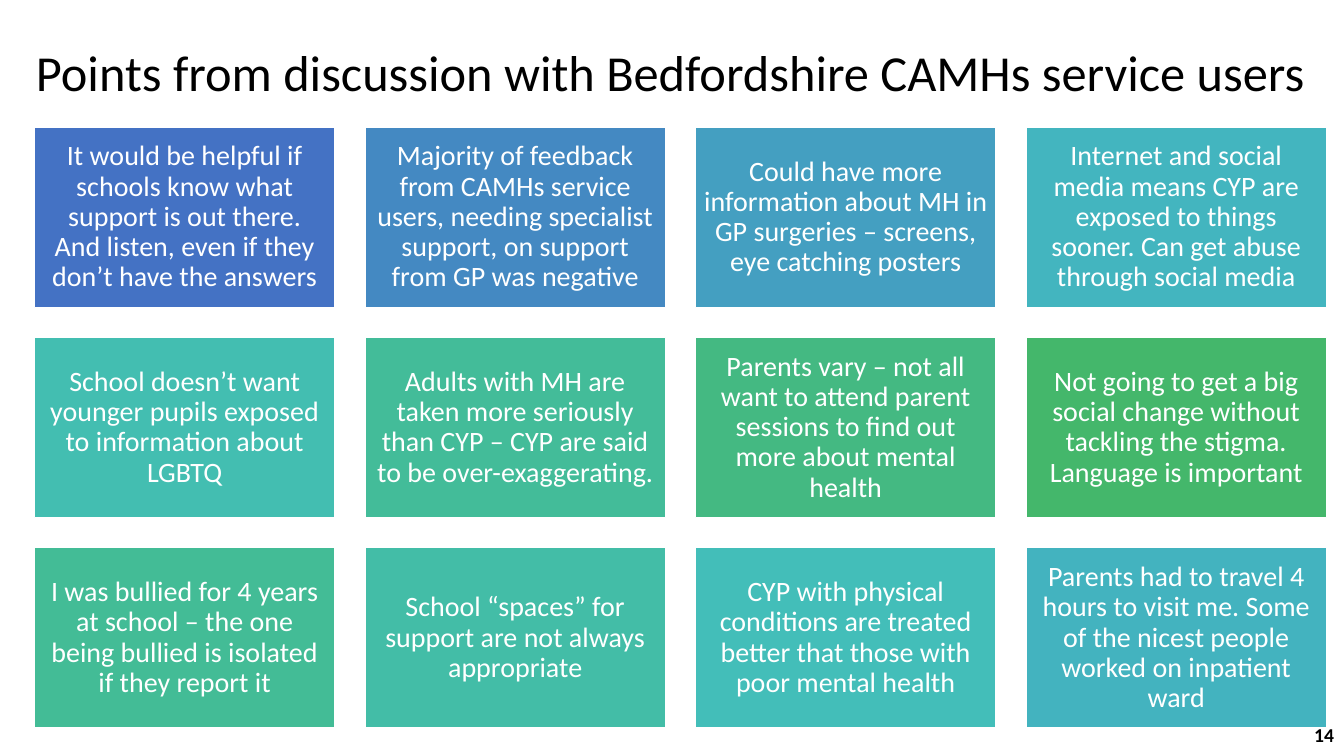
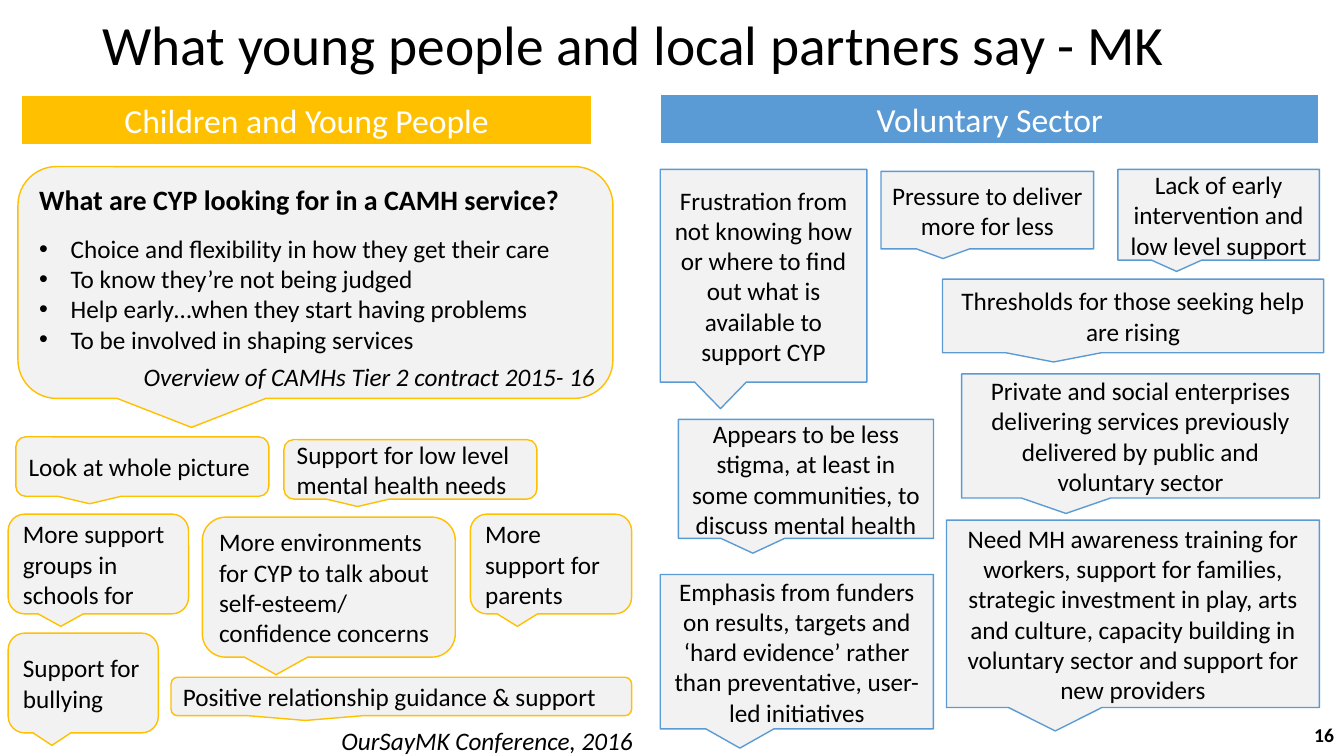
import collections
import dataclasses

import lxml.etree
import pptx
import pptx.dml.color
import pptx.enum.shapes
import pptx.enum.text
import pptx.oxml.ns
import pptx.util

Pt = pptx.util.Pt
SHAPE = pptx.enum.shapes.MSO_SHAPE
ALIGN = pptx.enum.text.PP_ALIGN
ANCHOR = pptx.enum.text.MSO_ANCHOR

Box = collections.namedtuple("Box", "x y w h")


@dataclasses.dataclass(frozen=True)
class Theme:
    font: str = "Calibri"
    ink: str = "000000"
    paper: str = "FFFFFF"
    bubble: str = "F2F2F2"
    youth: str = "FFC000"
    sector: str = "5B9BD5"
    tiles: tuple = (
        "4472C4", "4489C2", "449FC1", "43B5BF",
        "43BEB1", "43BC99", "44B982", "44B76B",
        "43BC96", "43BDA7", "43BEB9", "43B3BF",
    )
    band_size: float = 24
    strong_size: float = 20
    body_size: float = 18
    number_size: float = 14


THEME = Theme()
WIDTH, HEIGHT = 960, 540

POINTS = [
    "It would be helpful if schools know what support is out there. "
    "And listen, even if they don’t have the answers",
    "Majority of feedback from CAMHs service users, needing specialist support, "
    "on support from GP was negative",
    "Could have more information about MH in GP surgeries – screens, eye catching posters",
    "Internet and social media means CYP are exposed to things sooner. "
    "Can get abuse through social media",
    "School doesn’t want younger pupils exposed to information about LGBTQ",
    "Adults with MH are taken more seriously than CYP – CYP are said to be over-exaggerating.",
    "Parents vary – not all want to attend parent sessions to find out more about mental health",
    "Not going to get a big social change without tackling the stigma. Language is important",
    "I was bullied for 4 years at school – the one being bullied is isolated if they report it",
    "School “spaces” for support are not always appropriate",
    "CYP with physical conditions are treated better that those with poor mental health",
    "Parents had to travel 4 hours to visit me. "
    "Some of the nicest people worked on inpatient ward",
]

WISHES = [
    "Choice and flexibility in how they get their care",
    "To know they’re not being judged",
    "Help early…when they start having problems",
    "To be involved in shaping services",
]

# Callout boxes are measured from the corner of their panel.
YOUTH_CALLOUTS = [
    (Box(5.5, 245, 180.7, 42.5), "Look at whole picture"),
    (Box(197, 247, 180.7, 42.5), "Support for low level mental health needs"),
    (Box(138.7, 302.4, 180.7, 100),
     "More environments for CYP to talk about self-esteem/ confidence concerns"),
    (Box(0, 300.2, 128.9, 71.3), "More support groups in schools for"),
    (Box(330.2, 300.2, 115.2, 71.3), "More support for parents"),
    (Box(0, 385.2, 107.3, 71.3), "Support for bullying"),
    (Box(116.4, 416.8, 329, 27.4), "Positive relationship guidance & support"),
]

SECTOR_CALLOUTS = [
    (Box(0, 54, 147.6, 151.9),
     "Frustration from not knowing how or where to find out what is available to support CYP"),
    (Box(326.9, 54, 144, 64.8), "Lack of early intervention and low level support"),
    (Box(157.7, 55.4, 151.9, 55.4), "Pressure to deliver more for less"),
    (Box(215.3, 200.1, 255.6, 88.6),
     "Private and social enterprises delivering services previously delivered by "
     "public and voluntary sector"),
    (Box(13, 232.5, 182.2, 85),
     "Appears to be less stigma, at least in some communities, to discuss mental health"),
    (Box(201.6, 132.4, 272.2, 52.6), "Thresholds for those seeking help are rising"),
    (Box(0, 343.4, 195.1, 110.2),
     "Emphasis from funders on results, targets and ‘hard evidence’ rather than "
     "preventative, user-led initiatives"),
    (Box(204.5, 304.5, 266.4, 133.9),
     "Need MH awareness training for workers, support for families, strategic investment "
     "in play, arts and culture, capacity building in voluntary sector and support for "
     "new providers"),
]


def rgb(color):
    return pptx.dml.color.RGBColor.from_string(color)


def apply(obj, formats):
    for name, value in formats.items():
        setattr(obj, name, value)


def inside(panel, box):
    """Move a box measured from the panel's corner onto the slide."""
    return Box(panel.x + box.x, panel.y + box.y, box.w, box.h)


def add_paragraph(tf, text, size, color=THEME.ink, font=None, **layout):
    p = tf.paragraphs[0] if not tf.text else tf.add_paragraph()
    apply(p, {"alignment": ALIGN.LEFT, **layout})
    r = p.add_run()
    r.text = text
    apply(r.font, {"name": THEME.font, "size": Pt(size), **(font or {})})
    r.font.color.rgb = rgb(color)
    return p


def add_bullet(p, indent):
    ppr = p._p.get_or_add_pPr()
    ppr.set("marL", str(Pt(indent)))
    ppr.set("indent", str(-Pt(indent)))
    for tag, key, value in (("a:buFont", "typeface", "Arial"), ("a:buChar", "char", "•")):
        lxml.etree.SubElement(ppr, pptx.oxml.ns.qn(tag)).set(key, value)


def add_label(s, box, text, size, anchor=ANCHOR.TOP, **style):
    tf = s.shapes.add_textbox(*map(Pt, box)).text_frame
    apply(tf, {"word_wrap": True, "vertical_anchor": anchor})
    add_paragraph(tf, text, size, **style)


def add_panel_shape(s, kind, box, fill, line, line_width=1, anchor=ANCHOR.MIDDLE):
    sp = s.shapes.add_shape(kind, *map(Pt, box))
    sp.shadow.inherit = False
    sp.fill.solid()
    sp.fill.fore_color.rgb = rgb(fill)
    sp.line.color.rgb = rgb(line)
    sp.line.width = Pt(line_width)
    apply(sp.text_frame, {"word_wrap": True, "vertical_anchor": anchor})
    return sp.text_frame


def new_slide(prs, title, title_box, title_size, title_align, number):
    """Add a blank slide with the shared title and page number."""
    s = prs.slides.add_slide(prs.slide_layouts[6])
    add_label(s, title_box, title, title_size, ANCHOR.MIDDLE,
              alignment=title_align, line_spacing=0.9)
    add_label(s, Box(WIDTH - 216, 510.5, 216, 28.8), str(number), THEME.number_size,
              ANCHOR.MIDDLE, font={"bold": True}, alignment=ALIGN.RIGHT)
    return s


def tile_grid(s, box, texts, columns=4):
    """Fill the box with tiles whose gaps are a tenth of a tile's width."""
    w = box.w / (columns + 0.1 * (columns - 1))
    h, gap = 0.6 * w, 0.1 * w
    for i, (text, color) in enumerate(zip(texts, THEME.tiles)):
        row, column = divmod(i, columns)
        tile = inside(box, Box(column * (w + gap), row * (h + gap), w, h))
        tf = add_panel_shape(s, SHAPE.RECTANGLE, tile, color, THEME.paper)
        sides = ("left", "top", "right", "bottom")
        apply(tf, {f"margin_{side}": Pt(6) for side in sides})
        add_paragraph(tf, text, THEME.strong_size, THEME.paper,
                      alignment=ALIGN.CENTER, line_spacing=0.9)


def band(s, box, text, color):
    tf = add_panel_shape(s, SHAPE.RECTANGLE, box, color, THEME.paper, 1.5, ANCHOR.TOP)
    add_paragraph(tf, text, THEME.band_size, THEME.paper, alignment=ALIGN.CENTER)


def callouts(s, panel, kind, color, align, items):
    for box, text in items:
        tf = add_panel_shape(s, kind, inside(panel, box), THEME.bubble, color)
        add_paragraph(tf, text, THEME.body_size, alignment=align)


def wish_list(s, box):
    """Large callout with a heading, bullets and a source line."""
    tf = add_panel_shape(s, SHAPE.ROUNDED_RECTANGULAR_CALLOUT, box, THEME.bubble,
                         THEME.youth, anchor=ANCHOR.TOP)
    add_paragraph(tf, "What are CYP looking for in a CAMH service?", THEME.strong_size,
                  font={"bold": True}, space_after=Pt(12))
    for wish in WISHES:
        add_bullet(add_paragraph(tf, wish, THEME.body_size), 22.5)
    add_label(s, inside(box, Box(82.8, 135.2, 348.5, 28.8)),
              "Overview of CAMHs Tier 2 contract 2015- 16", THEME.body_size,
              font={"italic": True})


def youth_panel(s, panel):
    band(s, inside(panel, Box(9.1, 0.7, 408.2, 36)), "Children and Young People", THEME.youth)
    wish_list(s, inside(panel, Box(7, 52, 425, 165.6)))
    callouts(s, panel, SHAPE.ROUNDED_RECTANGULAR_CALLOUT, THEME.youth, ALIGN.LEFT,
             YOUTH_CALLOUTS)
    add_label(s, inside(panel, Box(104.9, 447.8, 348.5, 28.8)), "OurSayMK Conference, 2016",
              THEME.body_size, font={"italic": True}, alignment=ALIGN.RIGHT)


def sector_panel(s, panel):
    band(s, inside(panel, Box(0, 0, panel.w, 36)), "Voluntary Sector", THEME.sector)
    callouts(s, panel, SHAPE.RECTANGULAR_CALLOUT, THEME.sector, ALIGN.CENTER,
             SECTOR_CALLOUTS)


def main():
    prs = pptx.Presentation()
    apply(prs, {"slide_width": Pt(WIDTH), "slide_height": Pt(HEIGHT)})

    s = new_slide(prs, "Points from discussion with Bedfordshire CAMHs service users",
                  Box(12.2, 8.6, 933.8, 90.7), 36, ALIGN.CENTER, 14)
    tile_grid(s, Box(24.6, 90.8, 922.9, 429.3), POINTS)

    s = new_slide(prs, "What young people and local partners say - MK",
                  Box(66.2, 0.7, 828, 66.2), 39.6, ALIGN.LEFT, 16)
    sector_panel(s, Box(471.6, 67, 470.9, 454))
    youth_panel(s, Box(5.8, 67, 453.4, 473))

    prs.save("out.pptx")


if __name__ == "__main__":
    main()
